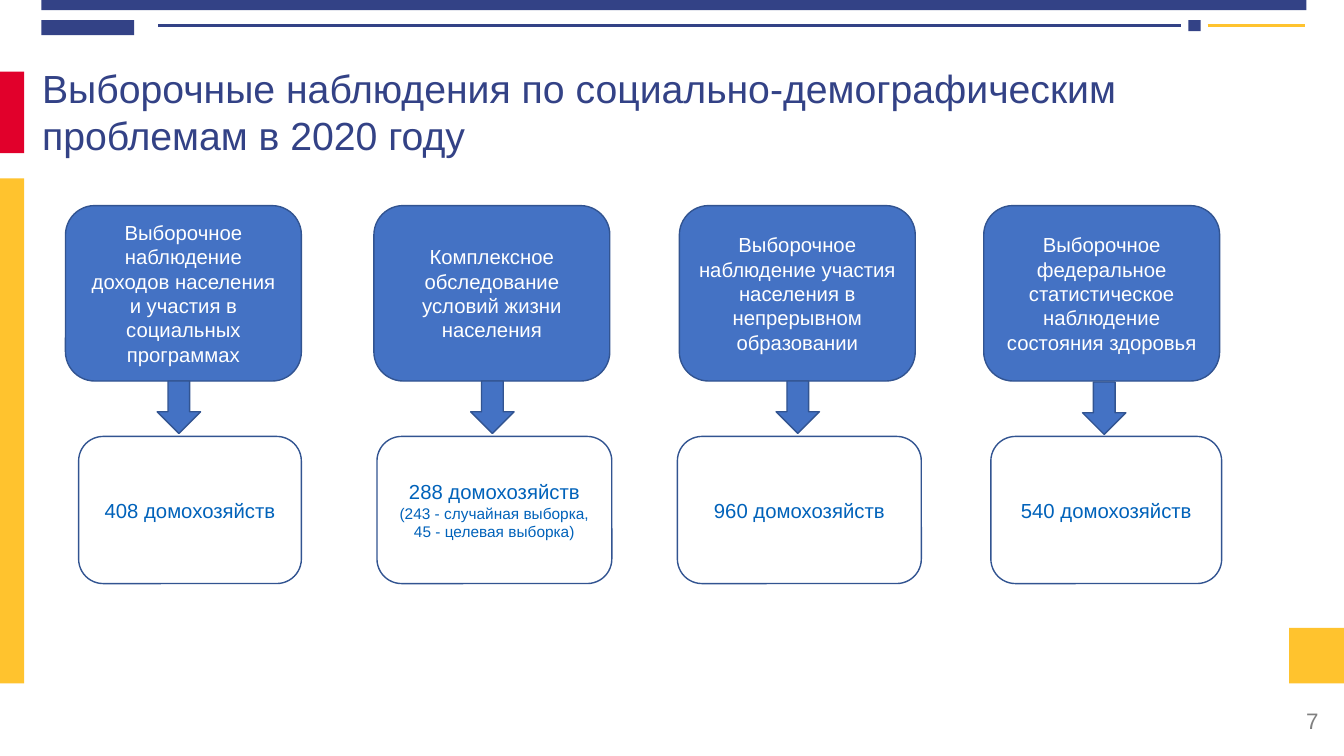
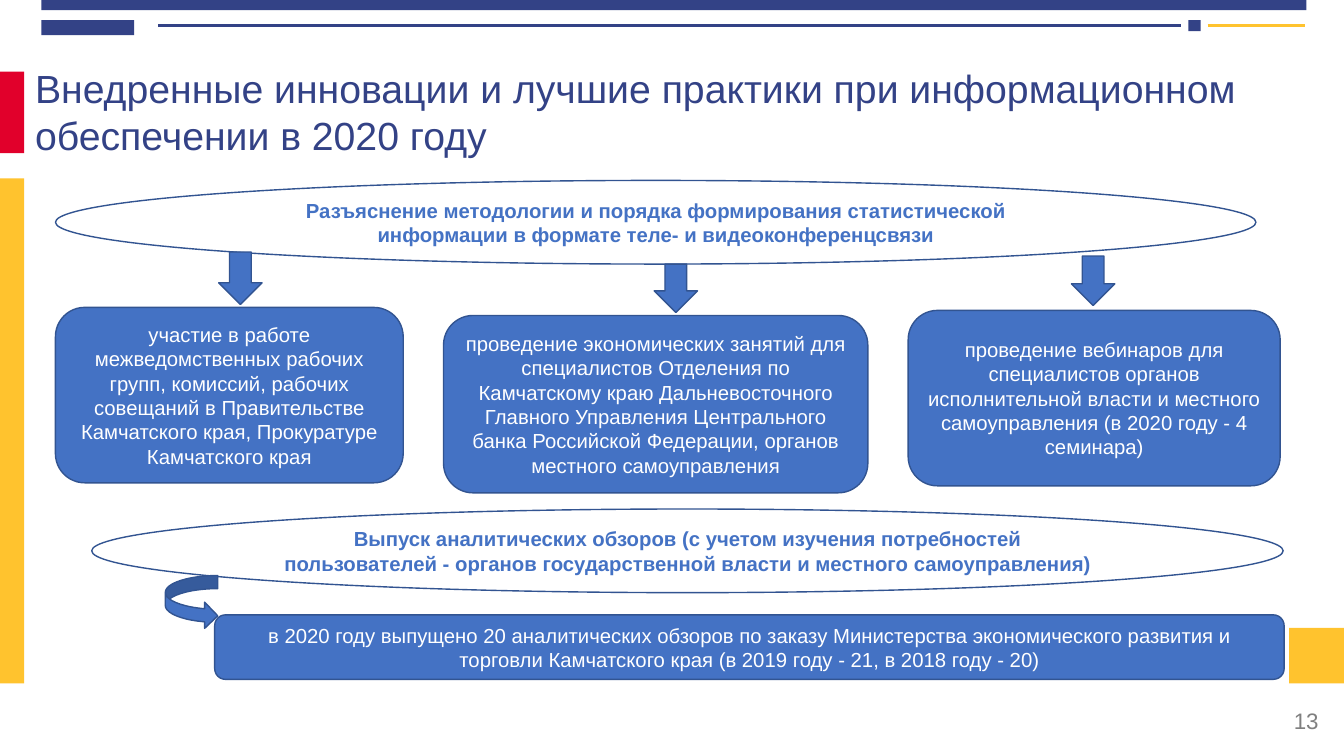
from pptx import Presentation
from pptx.dml.color import RGBColor
from pptx.enum.shapes import MSO_CONNECTOR as Connector, MSO_SHAPE as Shape
from pptx.enum.text import MSO_ANCHOR as Anchor, PP_ALIGN as Align
from pptx.oxml.ns import qn
from pptx.util import Pt

SCALE = 9144
FONT = "Arial"
COLORS = {
    "navy": "334286",
    "red": "E1002B",
    "yellow": "FFC32E",
    "blue": "4472C4",
    "outline": "325491",
    "answer": "0062BA",
    "gray": "808080",
    "white": "FFFFFF",
}

SURVEYS = [
    ("Выборочное наблюдение доходов населения и участия в социальных программах",
     65, (156, 378), (78, 221), "408 домохозяйств"),
    ("Комплексное обследование условий жизни населения",
     371, (467, 378), (374, 233),
     [("288 домохозяйств", 14.5), ("(243 - случайная выборка,", 11), ("45 - целевая выборка)", 11)]),
    ("Выборочное наблюдение участия населения в непрерывном образовании",
     674, (770, 378), (672, 242), "960 домохозяйств"),
    ("Выборочное федеральное статистическое наблюдение состояния здоровья",
     976, (1074, 379), (983, 229), "540 домохозяйств"),
]

PRACTICES = [
    ("участие в работе межведомственных рабочих групп, комиссий, рабочих совещаний "
     "в Правительстве Камчатского края, Прокуратуре Камчатского края",
     (55, 305, 345, 174), (217, 250, 43, 52)),
    ("проведение экономических занятий для специалистов Отделения по Камчатскому краю "
     "Дальневосточного Главного Управления Центрального банка Российской Федерации, "
     "органов местного самоуправления",
     (440, 313, 421, 176), (649, 262, 43, 48)),
    ("проведение вебинаров для специалистов органов исполнительной власти и местного "
     "самоуправления (в 2020 году - 4 семинара)",
     (901, 308, 369, 174), (1063, 254, 43, 49)),
]


def px(value):
    return int(value * SCALE)


def rgb(name):
    return RGBColor.from_string(COLORS[name])


def write_text(shape, text, size=14.5, color="white", bold=False, align=Align.CENTER,
               anchor=Anchor.MIDDLE):
    frame = shape.text_frame
    frame.word_wrap = True
    frame.vertical_anchor = anchor
    lines = [(text, size)] if isinstance(text, str) else text
    for index, (line, line_size) in enumerate(lines):
        paragraph = frame.add_paragraph() if index else frame.paragraphs[0]
        paragraph.alignment = align
        run = paragraph.add_run()
        run.text = line
        run.font.name = FONT
        run.font.size = Pt(line_size)
        run.font.bold = bold
        run.font.color.rgb = rgb(color)


class Deck:
    def __init__(self):
        self.presentation = Presentation()
        self.presentation.slide_width = px(1333.33)
        self.presentation.slide_height = px(750)
        self.slide = None

    def shape(self, kind, box, fill=None, line=None):
        shape = self.slide.shapes.add_shape(kind, *map(px, box))
        shape.shadow.inherit = False
        if fill:
            shape.fill.solid()
            shape.fill.fore_color.rgb = rgb(fill)
        else:
            shape.fill.background()
        if line:
            shape.line.color.rgb = rgb(line)
            shape.line.width = Pt(1)
        else:
            shape.line.fill.background()
        return shape

    def label(self, box, text, **style):
        write_text(self.slide.shapes.add_textbox(*map(px, box)), text, **style)

    def rule(self, left, right, top, color):
        line = self.slide.shapes.add_connector(
            Connector.STRAIGHT, px(left), px(top), px(right), px(top))
        line.line.color.rgb = rgb(color)
        line.line.width = Pt(2)
        properties = line._element.spPr
        properties.append(properties.makeelement(qn("a:effectLst"), {}))

    def card(self, box, text):
        write_text(self.shape(Shape.ROUNDED_RECTANGLE, box, "blue", "outline"), text)

    def answer(self, box, text):
        write_text(self.shape(Shape.ROUNDED_RECTANGLE, box, line="outline"), text, color="answer")

    def oval(self, box, text):
        write_text(self.shape(Shape.OVAL, box, line="outline"), text, color="blue", bold=True)

    def arrow(self, box, kind=Shape.DOWN_ARROW):
        self.shape(kind, box, "blue", "outline")

    def start_slide(self, title, number, title_left):
        self.slide = self.presentation.slides.add_slide(self.presentation.slide_layouts[6])
        bands = [
            ((41, 0, 1255, 10), "navy"),
            ((41, 20, 92, 15), "navy"),
            ((0, 71, 24, 81), "red"),
            ((0, 177, 24, 501), "yellow"),
            ((1279, 623, 54.33, 55), "yellow"),
            ((1179, 20, 12, 11), "navy"),
        ]
        for box, color in bands:
            self.shape(Shape.RECTANGLE, box, color)
        self.rule(157, 1172, 25, "navy")
        self.rule(1198, 1295, 25, "yellow")
        self.label((title_left, 59, 1247, 102), title, size=28, color="navy",
                   align=Align.LEFT, anchor=Anchor.TOP)
        self.label((1018, 695, 300, 40), number, size=16, color="gray", align=Align.RIGHT)


def build_surveys(deck):
    deck.start_slide("Выборочные наблюдения по социально-демографическим проблемам в 2020 году",
                     "7", 32)
    for survey, left, arrow, (answer_left, answer_width), households in SURVEYS:
        deck.card((left, 204, 234, 174), survey)
        deck.arrow((*arrow, 43, 52))
        deck.answer((answer_left, 433, answer_width, 146), households)


def build_practices(deck):
    deck.start_slide("Внедренные инновации и лучшие практики при информационном обеспечении "
                     "в 2020 году", "13", 25)
    deck.oval((55, 179, 1191, 83),
              "Разъяснение методологии и порядка формирования статистической информации "
              "в формате теле- и видеоконференцсвязи")
    for practice, card, arrow in PRACTICES:
        deck.arrow(arrow)
        deck.card(card, practice)
    deck.oval((91, 505, 1182, 83),
              "Выпуск аналитических обзоров (с учетом изучения потребностей пользователей - "
              "органов государственной власти и местного самоуправления)")
    deck.arrow((164, 571, 52, 53), Shape.CURVED_RIGHT_ARROW)
    deck.card((213, 610, 1061, 64),
              "в 2020 году выпущено 20 аналитических обзоров по заказу Министерства "
              "экономического развития и торговли Камчатского края "
              "(в 2019 году - 21, в 2018 году - 20)")


def main():
    deck = Deck()
    build_surveys(deck)
    build_practices(deck)
    deck.presentation.save("out.pptx")


if __name__ == "__main__":
    main()
